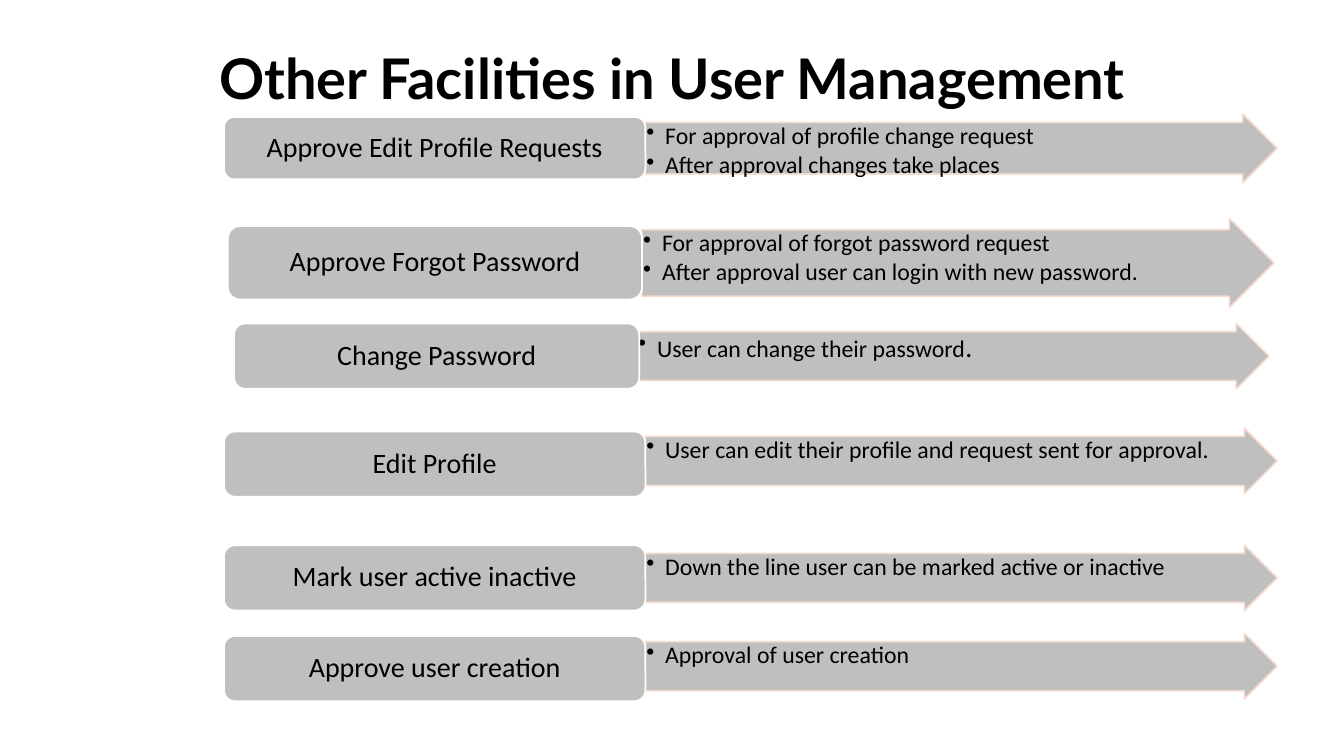
"""Build the slide on other facilities in user management."""
from lxml.etree import SubElement as Sub
from pptx import Presentation
from pptx.dml.color import RGBColor as Rgb
from pptx.enum.shapes import MSO_SHAPE as Kind
from pptx.enum.text import MSO_ANCHOR as Anchor, PP_ALIGN as Align
from pptx.oxml.ns import qn
from pptx.util import Pt

INK = {"text": "000000", "fill": "BFBFBF", "edge": "F6DACE", "rim": "FFFFFF"}
REACH = 451.4
ROWS = [
    ("Approve Edit Profile Requests", (160, 83.5, 301, 44.6), (460.8, 81.4, 49),
     [[("For approval of profile change request", 17)],
      [("After approval changes take places", 17)]]),
    ("Approve Forgot Password", (162.7, 161.5, 295.9, 52.4), (458.6, 156.2, 63.4),
     [[("For approval of forgot password request", 17)],
      [("After approval user can login with new password.", 17)]]),
    ("Change Password", (167.2, 231.1, 289.4, 46.6), (455, 231.1, 46.6),
     [[("User can change their password", 17), (".", 20)]]),
    ("Edit Profile", (160, 308.2, 301, 46.6), (460.8, 306, 46.6),
     [[("User can edit their profile and request sent for approval.", 17)]]),
    ("Mark user active inactive", (160, 389.5, 301, 46.6), (460.8, 389.5, 46.6),
     [[("Down the line user can be marked active or inactive", 17)]]),
    ("Approve user creation", (160, 454.3, 301, 46.6), (460.8, 452.6, 46.6),
     [[("Approval of user creation", 17)]]),
]


def add_form(slide, kind, area, fill=None, line=None):
    """Add a flat preset shape with optional fill and line."""
    form = slide.shapes.add_shape(kind, *map(Pt, area))
    form.shadow.inherit = False
    if fill:
        form.fill.solid()
        form.fill.fore_color.rgb = Rgb.from_string(INK[fill])
    else:
        form.fill.background()
    if line:
        form.line.color.rgb = Rgb.from_string(INK[line])
        form.line.width = Pt(1.25)
    else:
        form.line.fill.background()
    return form


def set_frame(form, anchor, side, edge):
    """Set anchor and margins, and return the text frame."""
    frame = form.text_frame
    frame.word_wrap = True
    frame.vertical_anchor = anchor
    frame.margin_left = frame.margin_right = Pt(side)
    frame.margin_top = frame.margin_bottom = Pt(edge)
    return frame


def add_run(para, text, size, face="Calibri", bold=False):
    """Add one styled run to a paragraph."""
    run = para.add_run()
    run.text = text
    run.font.size = Pt(size)
    run.font.name = face
    run.font.bold = bold
    run.font.color.rgb = Rgb.from_string(INK["text"])


def add_title(slide, text):
    """Add the centred slide title."""
    form = add_form(slide, Kind.ROUNDED_RECTANGLE, (0, 31.7, 960, 47.5))
    para = set_frame(form, Anchor.MIDDLE, 7.2, 3.6).paragraphs[0]
    para.alignment = Align.CENTER
    add_run(para, text, 40, "Lato", True)


def add_arrow(slide, left, top, height, points):
    """Add an arrow that holds bulleted points."""
    form = add_form(slide, Kind.RIGHT_ARROW, (left, top, REACH, height), "fill", "edge")
    form.adjustments[0] = 0.75
    form.adjustments[1] = 0.5
    tint = form.line.fill.fore_color
    tint.rgb = Rgb.from_string(INK["edge"])
    shade = form.line._ln.find(".//" + qn("a:srgbClr"))
    Sub(shade, qn("a:alpha"), val="90000")
    frame = set_frame(form, Anchor.TOP, 0.85, 0.85)
    for index, runs in enumerate(points):
        para = frame.add_paragraph() if index else frame.paragraphs[0]
        para.alignment = Align.LEFT
        para.level = 1
        para.line_spacing = 0.9
        para.space_after = Pt(2.5)
        props = para._p.get_or_add_pPr()
        props.set("marL", str(Pt(13.5)))
        props.set("indent", str(-Pt(13.5)))
        Sub(props, qn("a:buChar"), char="•")
        for text, size in runs:
            add_run(para, text, size)


def add_label(slide, area, text):
    """Add a rounded box with a centred label."""
    form = add_form(slide, Kind.ROUNDED_RECTANGLE, area, "fill", "rim")
    para = set_frame(form, Anchor.MIDDLE, 6, 3).paragraphs[0]
    para.alignment = Align.CENTER
    para.line_spacing = 0.9
    add_run(para, text, 20)


def main():
    """Build and save the deck."""
    deck = Presentation()
    deck.slide_width, deck.slide_height = Pt(960), Pt(540)
    slide = deck.slides.add_slide(deck.slide_layouts[6])
    add_title(slide, "Other Facilities in User Management")
    for label, area, arrow, points in ROWS:
        add_arrow(slide, *arrow, points)
        add_label(slide, area, label)
    deck.save("out.pptx")


if __name__ == "__main__":
    main()
